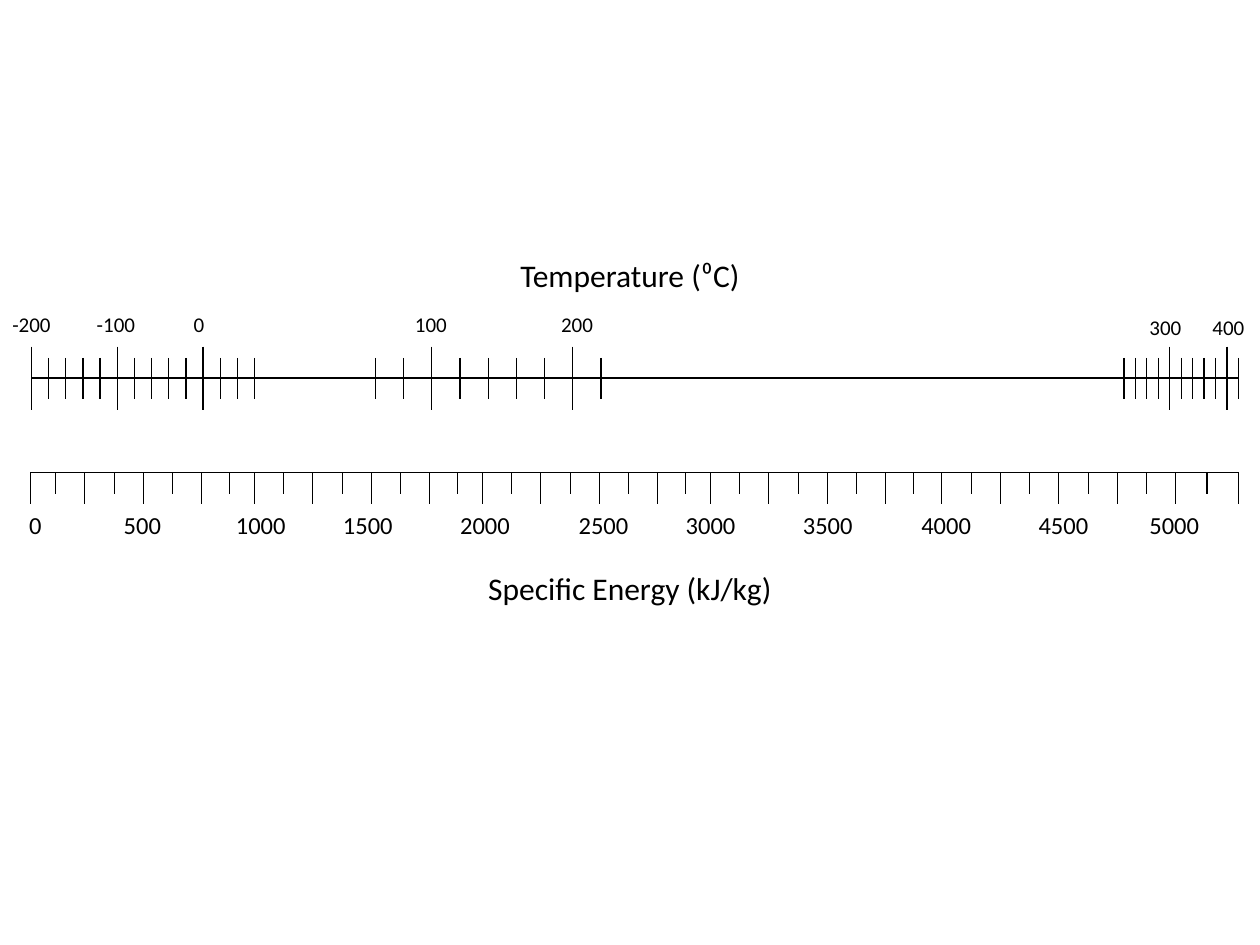
from lxml import etree
from pptx import Presentation
from pptx.dml.color import RGBColor
from pptx.enum.shapes import MSO_CONNECTOR
from pptx.enum.text import PP_ALIGN
from pptx.oxml.ns import qn
from pptx.util import Inches, Pt

STRAIGHT = MSO_CONNECTOR.STRAIGHT
CENTER = PP_ALIGN.CENTER
COLORS = {"ink": "000000"}
FONT = "Calibri"

prs = Presentation()
prs.slide_width, prs.slide_height = Inches(10), Inches(7.5)
slide = prs.slides.add_slide(prs.slide_layouts[6])


def add_line(x1, y1, x2, y2):
    line = slide.shapes.add_connector(
        STRAIGHT, Inches(x1), Inches(y1), Inches(x2), Inches(y2))
    line.line.color.rgb = RGBColor.from_string(COLORS["ink"])
    line.line.width = Pt(0.75)
    etree.SubElement(line._element.spPr, qn("a:effectLst"))


def add_label(text, center, top, width, height, size):
    box = slide.shapes.add_textbox(
        Inches(center - width / 2), Inches(top), Inches(width), Inches(height))
    box.text_frame.word_wrap = True
    paragraph = box.text_frame.paragraphs[0]
    paragraph.alignment = CENTER
    run = paragraph.add_run()
    run.text = text
    run.font.name = FONT
    run.font.size = Pt(size)
    run.font.color.rgb = RGBColor.from_string(COLORS["ink"])


# Temperature scale: a tick every 20 degrees, a long one every 100
add_line(0.25, 3, 9.83, 3)
# First temperature, tick count, left and right end of each phase
phases = [(-200, 14, 0.25, 2.02), (60, 9, 2.98, 4.77), (220, 11, 8.92, 9.83)]
for first_temperature, count, left, right in phases:
    for i in range(count):
        x = left + i * (right - left) / (count - 1)
        if (first_temperature + 20 * i) % 100 == 0:
            add_line(x, 2.75, x, 3.25)
        else:
            add_line(x, 2.84, x, 3.17)

temperature_labels = [
    (-200, 0.25, 2.42), (-100, 0.92, 2.42), (0, 1.58, 2.42), (100, 3.42, 2.42),
    (200, 4.58, 2.42), (300, 9.25, 2.45), (400, 9.75, 2.45)]
for temperature, center, top in temperature_labels:
    add_label(str(temperature), center, top, 0.83, 0.3, 12)

# Energy scale: a tick every 125 kJ/kg, a long one every 250
add_line(0.24, 3.75, 9.83, 3.75)
block_offsets = [0, 0.23, 0.46, 0.7, 0.93, 1.16, 1.39, 1.61]
energy_ticks = [start + offset for start in (0.21, 2.02, 3.83, 5.64)
                for offset in block_offsets]
energy_ticks[0] = 0.24
energy_ticks += [7.47, 7.71, 7.94, 8.17, 8.4, 8.64, 8.87, 9.1, 9.33, 9.58, 9.83]
for i, x in enumerate(energy_ticks):
    add_line(x, 3.75, x, 4 if i % 2 == 0 else 3.92)

energy_centers = [0.28, 1.13, 2.07, 2.92, 3.85, 4.79, 5.64, 6.57, 7.51, 8.44, 9.32]
width_by_digits = {1: 0.39, 3: 0.54, 4: 0.7}
for i, center in enumerate(energy_centers):
    energy = str(500 * i)
    add_label(energy, center, 4, width_by_digits[len(energy)], 0.34, 14)

# Scale names
add_label("Specific Energy (kJ/kg)", 5, 4.47, 2.68, 0.4, 18)
add_label("Temperature (⁰C)", 5, 1.98, 2.17, 0.4, 18)

prs.save("out.pptx")
